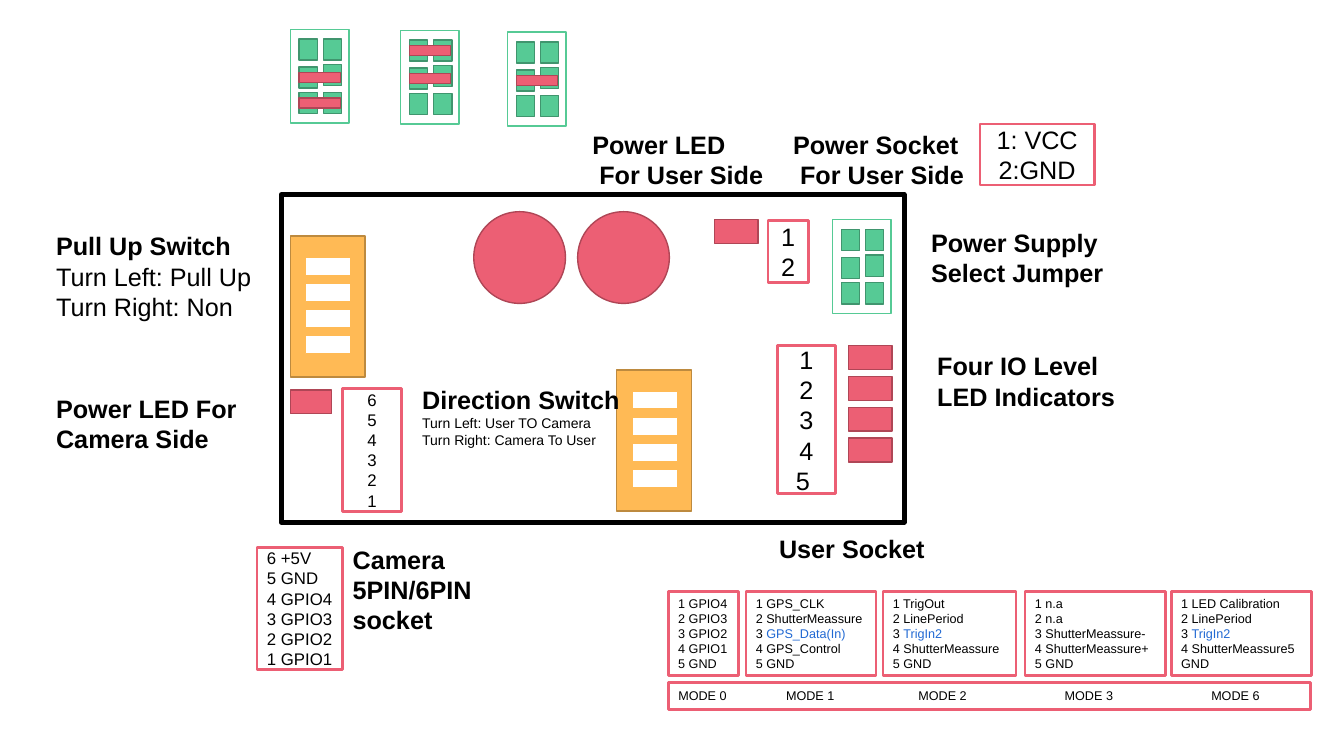
"""Draw the camera trigger board with its switches, sockets and pin modes."""
from dataclasses import dataclass
from pptx import Presentation
from pptx.dml.color import RGBColor
from pptx.enum.shapes import MSO_SHAPE as Kind
from pptx.enum.text import MSO_ANCHOR as Anchor, PP_ALIGN as Align
from pptx.oxml.ns import qn
from pptx.util import Pt
from lxml.etree import SubElement

RED, ROSE = "EC5F74", "AF4656"
GREEN, MOSS = "56CA95", "40956E"
GOLD, BROWN = "FFBA55", "BD8A3F"
WHITE, BLACK, BLUE = "FFFFFF", "000000", "2169D3"


@dataclass
class Label:
    x: float
    y: float
    w: float
    h: float
    head: str
    rest: str = ""
    small: float = 18


@dataclass
class Socket:
    x: float
    y: float
    w: float
    h: float
    pins: str
    size: float
    mid: bool = True
    edge: float = 2


@dataclass
class Jumper:
    x: float
    y: float
    bars: tuple = ()


LABELS = [
    Label(33, 161.3, 155.5, 94, "Pull Up Switch", "Turn Left: Pull Up\nTurn Right: Non"),
    Label(294.5, 270.7, 265, 65.5, "Direction Switch",
          "Turn Left: User TO Camera\nTurn Right: Camera To User", 10),
    Label(658, 158.5, 155.5, 72.7, "Power Supply\nSelect Jumper"),
    Label(662.4, 247, 155.5, 51, "Four IO Level\nLED Indicators"),
    Label(33, 277.2, 155.5, 72.7, "Power LED For\nCamera Side"),
    Label(416, 88.5, 143.3, 51, "Power LED\n For User Side"),
    Label(559.4, 88.5, 140.4, 51, "Power Socket\n For User Side"),
    Label(244.8, 385.2, 124.6, 72.7, "Camera 5PIN/6PIN socket"),
    Label(549.4, 377.3, 132.5, 28.8, "User Socket"),
]
MODE_Y, MODE_H = 422.6, 59.8
SOCKETS = [
    Socket(244.8, 277.7, 41.8, 87.4, "6\n5\n4\n3\n2\n1", 12),
    Socket(555.1, 247, 41.8, 105.8, "1\n2\n3\n4\n5 ", 18),
    Socket(548.6, 157.7, 28.8, 44, "1\n2", 18),
    Socket(699.8, 88.5, 82.1, 44, "1: VCC\n2:GND", 18, edge=1.5),
    Socket(183.6, 391, 61.2, 87.1,
           "6 +5V\n5 GND\n4 GPIO4\n3 GPIO3\n2 GPIO2\n1 GPIO1", 12, False),
    Socket(477.4, MODE_Y, 50.4, MODE_H,
           "1 GPIO4\n2 GPIO3\n3 GPIO2\n4 GPIO1\n5 GND", 9, False),
    Socket(532.8, MODE_Y, 92.9, MODE_H,
           "1 GPS_CLK\n2 ShutterMeassure\n3 |GPS_Data(In)\n4 GPS_Control\n5 GND", 9, False),
    Socket(630.7, MODE_Y, 95, MODE_H,
           "1 TrigOut\n2 LinePeriod\n3 |TrigIn2\n4 ShutterMeassure\n5 GND", 9, False),
    Socket(732.2, MODE_Y, 100.1, MODE_H,
           "1 n.a\n2 n.a\n3 ShutterMeassure-\n4 ShutterMeassure+\n5 GND", 9, False),
    Socket(836.6, MODE_Y, 100.1, MODE_H,
           "1 LED Calibration\n2 LinePeriod\n3 |TrigIn2\n4 ShutterMeassure5 GND", 9, False),
    Socket(477.4, 487.4, 458.9, 19.4, "MODE 0\tMODE 1\tMODE 2\tMODE 3\tMODE 6", 9, False),
]
TABS = (77, 171.5, 276, 380.7)
JUMPERS = [Jumper(594.7, 157), Jumper(207.4, 20.9, (1, 2)),
           Jumper(286.2, 21.6, (0, 1)), Jumper(362.5, 23, (1,))]
LEDS = [(207.4, 278.6), (510.5, 157)] + [(606.2, 247 + 22 * i) for i in range(4)]

deck = Presentation()
deck.slide_width, deck.slide_height = Pt(960), Pt(540)
slide = deck.slides.add_slide(deck.slide_layouts[6])


def tint(code: str) -> RGBColor:
    return RGBColor.from_string(code)


def block(x: float, y: float, w: float, h: float, fill: str, line: str,
          edge: float = 1, kind: Kind = Kind.RECTANGLE):
    shape = slide.shapes.add_shape(kind, Pt(x), Pt(y), Pt(w), Pt(h))
    shape.shadow.inherit = False
    shape.fill.solid()
    shape.fill.fore_color.rgb = tint(fill)
    shape.line.color.rgb = tint(line)
    shape.line.width = Pt(edge)
    return shape


def write(frame, index: int, text: str, size: float, bold: bool = False,
          align: Align = Align.LEFT) -> None:
    para = frame.paragraphs[0] if index == 0 else frame.add_paragraph()
    para.alignment = align
    if "\t" in text:
        stops = SubElement(para._p.get_or_add_pPr(), qn("a:tabLst"))
        for pos in TABS:
            SubElement(stops, qn("a:tab"), pos=str(Pt(pos)), algn="l")
    font = para.font
    font.name, font.size, font.bold = "Arial", Pt(size), bold
    font.color.rgb = tint(BLACK)
    plain, _, accent = text.partition("|")
    para.add_run().text = plain
    if accent:
        run = para.add_run()
        run.text = accent
        run.font.color.rgb = tint(BLUE)


def draw_label(label: Label) -> None:
    box = slide.shapes.add_textbox(Pt(label.x), Pt(label.y), Pt(label.w), Pt(label.h))
    frame = box.text_frame
    frame.word_wrap = True
    heads = label.head.split("\n")
    for i, text in enumerate(heads + label.rest.splitlines()):
        bold = i < len(heads)
        write(frame, i, text, 18 if bold else label.small, bold)


def draw_socket(sock: Socket) -> None:
    frame = block(sock.x, sock.y, sock.w, sock.h, WHITE, RED, sock.edge).text_frame
    frame.word_wrap = True
    frame.vertical_anchor = Anchor.MIDDLE
    if not sock.mid:
        frame.margin_right = Pt(3)
    for i, text in enumerate(sock.pins.split("\n")):
        write(frame, i, text, sock.size, align=Align.CENTER if sock.mid else Align.LEFT)


def draw_switch(x: float, y: float) -> None:
    block(x, y, 53.3, 100.8, GOLD, BROWN)
    for i in range(4):
        block(x + 10.8, y + 15.1 + 18.7 * i, 32.4, 13, WHITE, GOLD)


def draw_jumper(jump: Jumper) -> None:
    block(jump.x, jump.y, 41.8, 67, WHITE, GREEN)
    for dx, rows in ((6.3, (7, 27, 45)), (23.6, (7, 25.2, 45))):
        for dy in rows:
            block(jump.x + dx, jump.y + dy, 13, 15.1, GREEN, MOSS)
    for row in jump.bars:
        block(jump.x + 6.3, jump.y + (10.8, 31, 49)[row], 29.5, 7.2, RED, ROSE)


def main() -> None:
    block(200.9, 139, 445, 234, WHITE, BLACK, 3.5)
    for x, y in ((207.4, 168.5), (440.6, 264.2)):
        draw_switch(x, y)
    for x, y in LEDS:
        block(x, y, 31 if x > 300 else 29.5, 17, RED, ROSE)
    for x in (338.4, 412.6):
        block(x, 151.2, 65.5, 65.5, RED, ROSE, kind=Kind.OVAL)
    for jump in JUMPERS:
        draw_jumper(jump)
    for sock in SOCKETS:
        draw_socket(sock)
    for label in LABELS:
        draw_label(label)
    deck.save("out.pptx")


if __name__ == "__main__":
    main()
